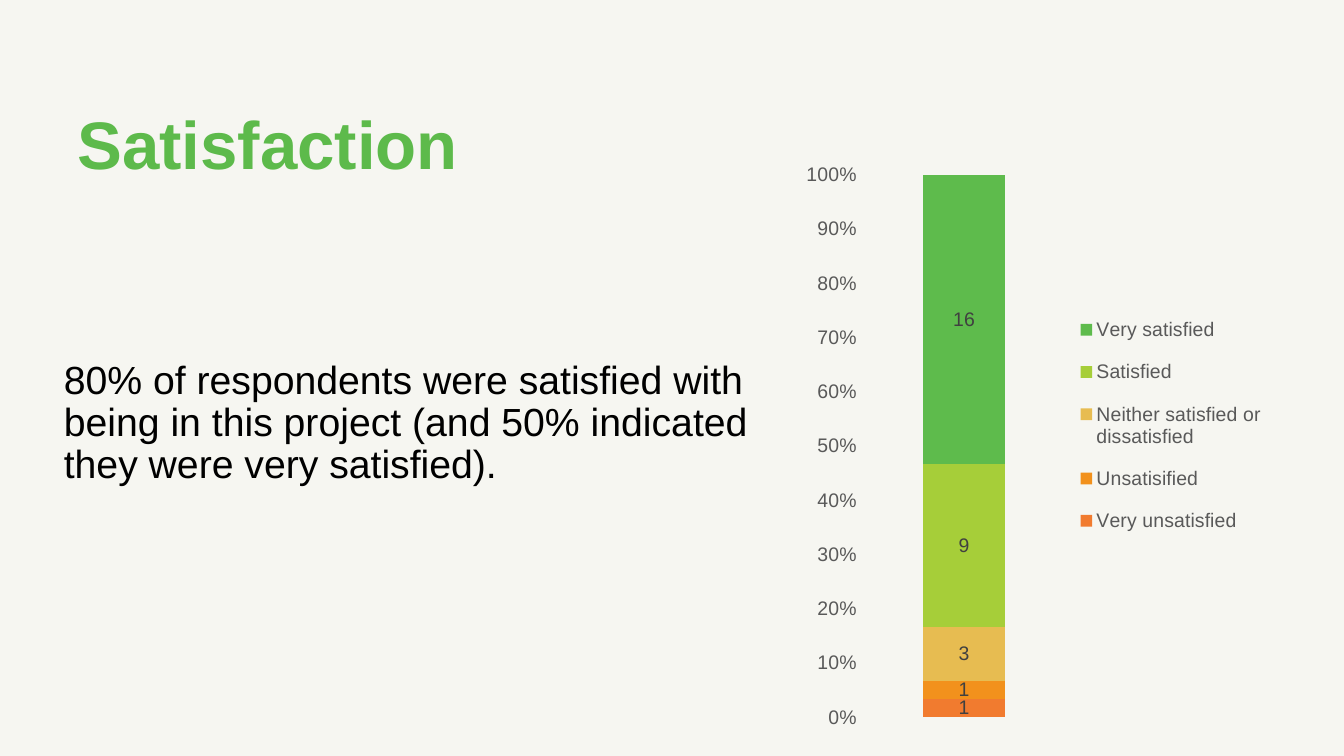
import pptx
import pptx.chart.data
import pptx.dml.color
import pptx.enum.chart
import pptx.enum.text
import pptx.oxml
import pptx.oxml.ns
import pptx.util

WIDTH, HEIGHT = 13.33, 7.5
RATINGS = [
    ("Very unsatisfied", 1, "F17B2F"),
    ("Unsatisified", 1, "F2911C"),
    ("Neither satisfied or dissatisfied", 3, "E7BC51"),
    ("Satisfied", 9, "A6CE39"),
    ("Very satisfied", 16, "5EBB4C"),
]


def color(hex_string):
    return pptx.dml.color.RGBColor.from_string(hex_string)


class SlideBuilder:
    """Holds the style and the slide; lengths are shares of the slide's size."""

    font_name = "Arial"
    background = "F6F6F1"
    chart_size = 14

    def __init__(self, presentation):
        self.slide = presentation.slides.add_slide(presentation.slide_layouts[1])
        fill = self.slide.background.fill
        fill.solid()
        fill.fore_color.rgb = color(self.background)

    def box(self, left, top, width, height):
        shares = ((left, WIDTH), (top, HEIGHT), (width, WIDTH), (height, HEIGHT))
        return [pptx.util.Inches(share * full) for share, full in shares]

    def style(self, font, size, hex_string, bold=False):
        font.name = self.font_name
        font.size = pptx.util.Pt(size)
        font.bold = bold
        font.color.rgb = color(hex_string)

    def placeholder(self, shape, box, text, size, hex_string, anchor, bold=False):
        shape.left, shape.top, shape.width, shape.height = self.box(*box)
        frame = shape.text_frame
        frame.text = text
        frame.word_wrap = True
        frame.auto_size = pptx.enum.text.MSO_AUTO_SIZE.NONE
        frame.vertical_anchor = anchor
        paragraph = frame.paragraphs[0]
        paragraph.alignment = pptx.enum.text.PP_ALIGN.LEFT
        paragraph.line_spacing = 0.9
        self.style(paragraph.font, size, hex_string, bold)
        return paragraph

    def title(self, text, box):
        self.placeholder(self.slide.shapes.title, box, text, 48, "5DBA4B",
                         pptx.enum.text.MSO_ANCHOR.BOTTOM, bold=True)

    def body(self, text, box):
        paragraph = self.placeholder(self.slide.placeholders[1], box, text, 28,
                                     "000000", pptx.enum.text.MSO_ANCHOR.TOP)
        paragraph.space_before = pptx.util.Pt(10)
        paragraph.space_after = pptx.util.Pt(6)
        # Plain text without a bullet
        properties = paragraph._p.get_or_add_pPr()
        properties.set("marL", "0")
        properties.set("indent", "0")
        properties.append(pptx.oxml.parse_xml(
            f"<a:buNone {pptx.oxml.ns.nsdecls('a')}/>"))

    def manual_layout(self, element, index, x, y, w, h, target=""):
        """Place a chart part by shares of the chart's size."""
        for existing in element.findall(pptx.oxml.ns.qn("c:layout")):
            element.remove(existing)
        sizes = "".join(f'<c:{key} val="{value}"/>'
                        for key, value in zip("xywh", (x, y, w, h)))
        element.insert(index, pptx.oxml.parse_xml(
            f"<c:layout {pptx.oxml.ns.nsdecls('c')}><c:manualLayout>{target}"
            f'<c:xMode val="edge"/><c:yMode val="edge"/>{sizes}'
            "</c:manualLayout></c:layout>"))

    def stacked_chart(self, ratings, box):
        data = pptx.chart.data.CategoryChartData()
        data.categories = ["1"]
        for name, count, _ in ratings:
            data.add_series(name, [count])
        chart = self.slide.shapes.add_chart(
            pptx.enum.chart.XL_CHART_TYPE.COLUMN_STACKED_100,
            *self.box(*box), data).chart
        self.style(chart.font, self.chart_size, "000000")
        chart.has_title = False

        # Column segments and their labels
        plot = chart.plots[0]
        plot.gap_width, plot.overlap = 150, 100
        plot.vary_by_categories = False
        for series, (_, _, hex_string) in zip(plot.series, ratings):
            series.format.fill.solid()
            series.format.fill.fore_color.rgb = color(hex_string)
            labels = series.data_labels
            labels.show_value = True
            labels.position = pptx.enum.chart.XL_LABEL_POSITION.CENTER
            self.style(labels.font, self.chart_size, "404040")

        # Axes
        chart.category_axis.visible = False
        axis = chart.value_axis
        axis.has_major_gridlines = False
        axis.major_tick_mark = pptx.enum.chart.XL_TICK_MARK.NONE
        axis.minimum_scale, axis.maximum_scale, axis.major_unit = 0, 1, 0.1
        axis.format.line.fill.background()
        axis.tick_labels.number_format = "0%"
        axis.tick_labels.number_format_is_linked = False
        self.style(axis.tick_labels.font, self.chart_size, "595959")

        # Legend and plot area
        chart.has_legend = True
        legend = chart.legend
        legend.position = pptx.enum.chart.XL_LEGEND_POSITION.RIGHT
        legend.include_in_layout = False
        self.style(legend.font, self.chart_size, "595959")
        self.manual_layout(legend._element, 1, 0.52, 0.25, 0.42, 0.43)
        plot_area = chart._chartSpace.chart.plotArea
        self.manual_layout(plot_area, 0, 0.1, 0.04, 0.42, 0.92,
                           '<c:layoutTarget val="inner"/>')


def main():
    presentation = pptx.Presentation()
    presentation.slide_width = pptx.util.Inches(WIDTH)
    presentation.slide_height = pptx.util.Inches(HEIGHT)
    builder = SlideBuilder(presentation)
    builder.title("Satisfaction", (0.05, 0.06, 0.91, 0.19))
    builder.body("80% of respondents were satisfied with being in this project "
                 "(and 50% indicated they were very satisfied).",
                 (0.04, 0.47, 0.57, 0.5))
    builder.stacked_chart(RATINGS, (0.6, 0.2, 0.37, 0.78))
    presentation.save("out.pptx")


if __name__ == "__main__":
    main()
